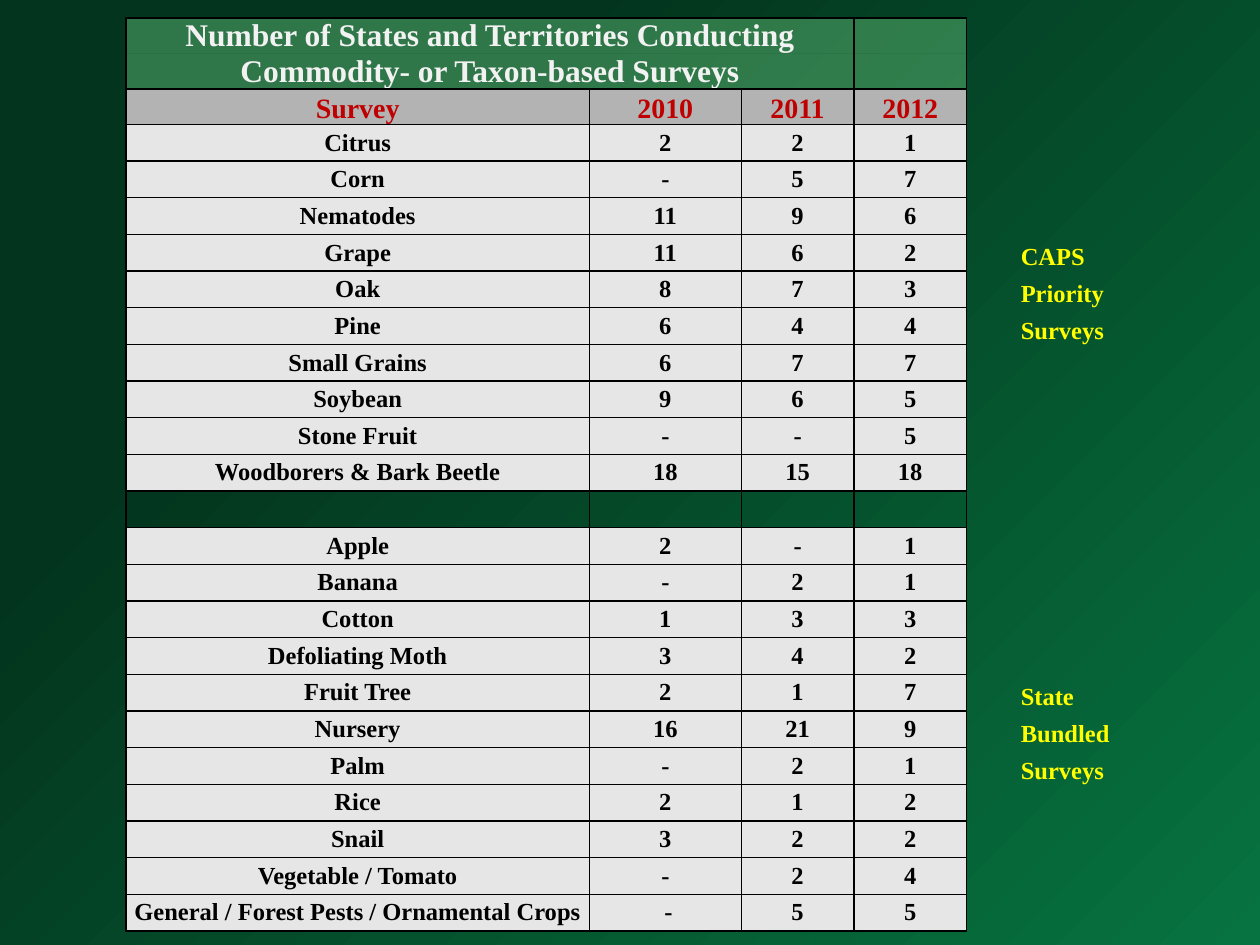
"""Build the slide with the table of survey counts by year."""
from lxml import etree
from pptx import Presentation
from pptx.dml.color import RGBColor
from pptx.enum import text
from pptx.oxml import ns
from pptx.util import Pt

TITLES = ["Number of States and Territories Conducting",
          "Commodity- or Taxon-based Surveys"]
HEADER = ("Survey", "2010", "2011", "2012")
PRIORITY_SURVEYS = [
    ("Citrus", "2", "2", "1"),
    ("Corn", "-", "5", "7"),
    ("Nematodes", "11", "9", "6"),
    ("Grape", "11", "6", "2"),
    ("Oak", "8", "7", "3"),
    ("Pine", "6", "4", "4"),
    ("Small Grains", "6", "7", "7"),
    ("Soybean", "9", "6", "5"),
    ("Stone Fruit", "-", "-", "5"),
    ("Woodborers & Bark Beetle", "18", "15", "18"),
]
BUNDLED_SURVEYS = [
    ("Apple", "2", "-", "1"),
    ("Banana", "-", "2", "1"),
    ("Cotton", "1", "3", "3"),
    ("Defoliating Moth", "3", "4", "2"),
    ("Fruit Tree", "2", "1", "7"),
    ("Nursery", "16", "21", "9"),
    ("Palm", "-", "2", "1"),
    ("Rice", "2", "1", "2"),
    ("Snail", "3", "2", "2"),
    ("Vegetable / Tomato", "-", "2", "4"),
    ("General / Forest Pests / Ornamental Crops", "\u00a0-", "5", "5"),
]
SIDE_LABELS = {6: ["CAPS", "Priority", "Surveys"],
               18: ["State", "Bundled", "Surveys"]}

FONT = "Times New Roman"
BLACK = RGBColor(0x00, 0x00, 0x00)
TITLE_TEXT = RGBColor(0xF2, 0xF2, 0xF2)
HEADER_TEXT = RGBColor(0xC0, 0x00, 0x00)
LABEL_TEXT = RGBColor(0xFF, 0xFF, 0x00)
TITLE_FILL = RGBColor(0x64, 0xC4, 0x7B)
HEADER_FILL = RGBColor(0xB3, 0xB3, 0xB3)
BODY_FILL = RGBColor(0xE6, 0xE6, 0xE6)
DARK_GREEN = RGBColor(0x03, 0x34, 0x1D)
LIGHT_GREEN = RGBColor(0x07, 0x73, 0x40)

LEFT, TOP = 72, 10.2
COLUMN_WIDTHS = [264.8, 86.8, 64.4, 64.4, 31, 64.6]
TITLE_HEIGHT, BODY_HEIGHT = 20.3, 20.95
LABEL_COLUMN = 5
BOTTOM, MIDDLE = text.MSO_ANCHOR.BOTTOM, text.MSO_ANCHOR.MIDDLE
CENTER, START = text.PP_ALIGN.CENTER, text.PP_ALIGN.LEFT


def set_borders(cell, sides):
    properties = cell._tc.get_or_add_tcPr()
    for side in "LRTB":
        line = etree.SubElement(properties, ns.qn(f"a:ln{side}"), w=str(Pt(1)))
        if side in sides:
            fill = etree.SubElement(line, ns.qn("a:solidFill"))
            etree.SubElement(fill, ns.qn("a:srgbClr"), val=str(BLACK))
        else:
            etree.SubElement(line, ns.qn("a:noFill"))


def border_sides(row, column):
    if column > 4:
        return ""
    if column == 4:
        return "L"
    return {0: "LRT", 1: "LRB"}.get(row, "LRTB")


def set_fill(cell, color, alpha=None):
    cell.fill.solid()
    cell.fill.fore_color.rgb = color
    if alpha:
        for element in cell._tc.tcPr.findall(ns.qn("a:solidFill") + "/" + ns.qn("a:srgbClr")):
            etree.SubElement(element, ns.qn("a:alpha"), val=str(alpha * 1000))


def write(cell, words, size, color, anchor, alignment=CENTER):
    cell.vertical_anchor = anchor
    paragraph = cell.text_frame.paragraphs[0]
    paragraph.alignment = alignment
    run = paragraph.add_run()
    run.text = words
    run.font.name, run.font.size, run.font.bold = FONT, Pt(size), True
    run.font.color.rgb = color


def paint_background(slide):
    fill = slide.background.fill
    fill.gradient()
    fill.gradient_angle = 315
    for stop, position, color in zip(fill.gradient_stops, (0.26, 1), (DARK_GREEN, LIGHT_GREEN)):
        stop.position = position
        stop.color.rgb = color


def add_survey_table(slide):
    body = PRIORITY_SURVEYS + [()] + BUNDLED_SURVEYS
    heights = [TITLE_HEIGHT] * 3 + [BODY_HEIGHT] * len(body)
    frame = slide.shapes.add_table(len(heights), len(COLUMN_WIDTHS), Pt(LEFT), Pt(TOP),
                                   Pt(sum(COLUMN_WIDTHS)), Pt(sum(heights)))
    table = frame.table
    table.first_row = table.horz_banding = False
    for column, width in zip(table.columns, COLUMN_WIDTHS):
        column.width = Pt(width)
    for row, height in zip(table.rows, heights):
        row.height = Pt(height)

    for row in range(len(heights)):
        for column in range(len(COLUMN_WIDTHS)):
            cell = table.cell(row, column)
            cell.margin_left = cell.margin_right = cell.margin_top = cell.margin_bottom = 0
            set_borders(cell, border_sides(row, column))
            cell.fill.background()

    for row, title in enumerate(TITLES):
        table.cell(row, 0).merge(table.cell(row, 2))
        write(table.cell(row, 0), title, 18, TITLE_TEXT, BOTTOM)
        for column in range(4):
            set_fill(table.cell(row, column), TITLE_FILL, 46)
    for column, words in enumerate(HEADER):
        write(table.cell(2, column), words, 16, HEADER_TEXT, BOTTOM)
        set_fill(table.cell(2, column), HEADER_FILL)
    for row, values in enumerate(body, 3):
        for column, words in enumerate(values):
            write(table.cell(row, column), words, 14, BLACK, MIDDLE)
            set_fill(table.cell(row, column), BODY_FILL)
    for first_row, label in SIDE_LABELS.items():
        for row, words in enumerate(label, first_row):
            write(table.cell(row, LABEL_COLUMN), words, 14, LABEL_TEXT, BOTTOM, START)

    for cell in table.iter_cells():
        paragraph = cell.text_frame.paragraphs[0]
        if not paragraph.runs:
            etree.SubElement(paragraph._p, ns.qn("a:endParaRPr"), sz="1400")


def main():
    presentation = Presentation()
    presentation.slide_width, presentation.slide_height = Pt(720), Pt(540)
    slide = presentation.slides.add_slide(presentation.slide_layouts[6])
    paint_background(slide)
    add_survey_table(slide)
    presentation.save("out.pptx")


if __name__ == "__main__":
    main()
